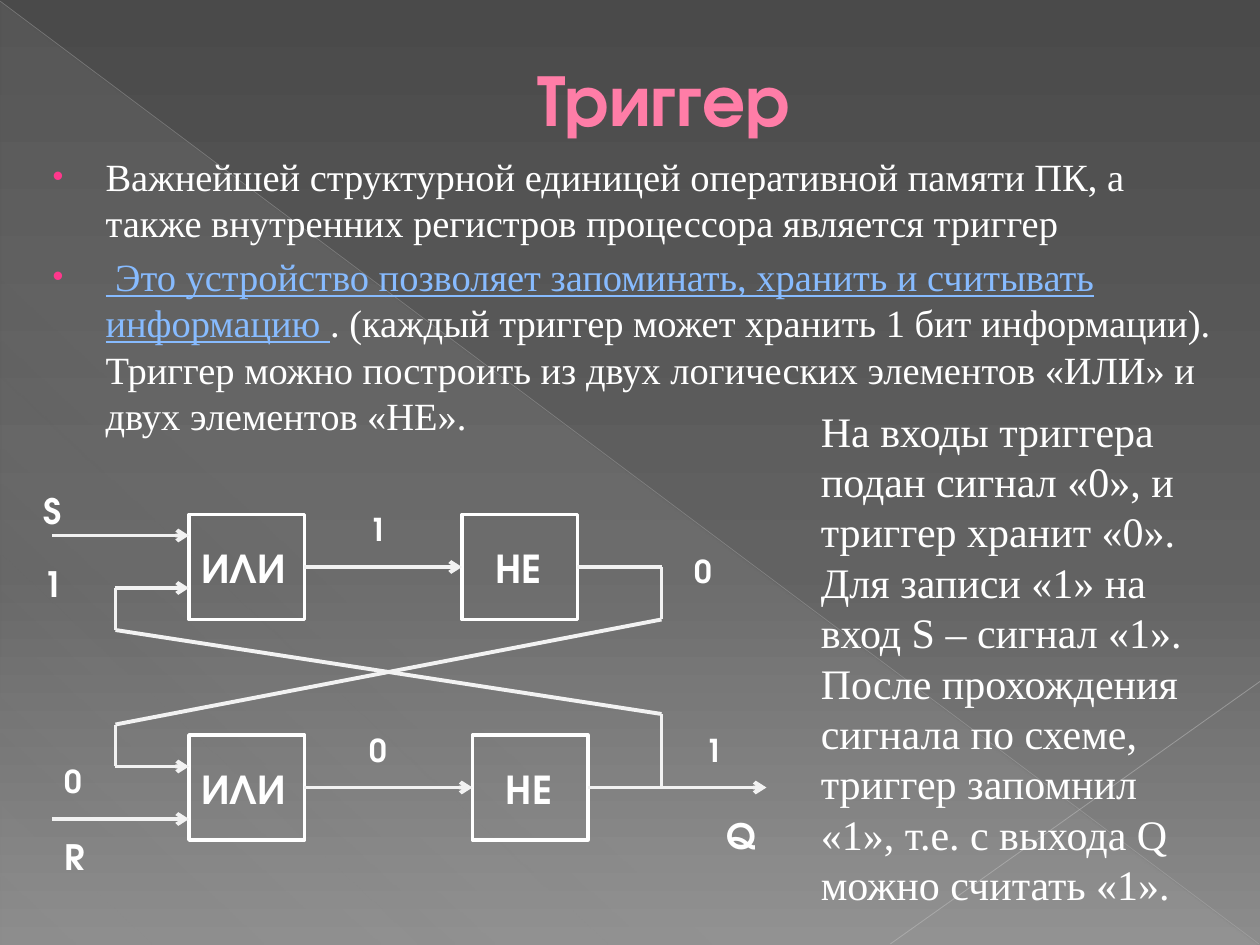
from typing import NamedTuple, Optional

from lxml import etree
from pptx import Presentation, util as u
from pptx.dml.color import RGBColor
from pptx.enum import shapes as sh, text as tx
from pptx.oxml import ns

COLORS = {
    "white": "FFFFFF", "wire": "F2F2F2", "title": "FF7DA7", "bullet": "FF388C",
    "link": "87BBFF", "veil": "D2D2D2", "diagonal": "BFBFBF", "corner": "C6C6C6",
    "bg_top": "4A4A4A", "bg_middle": "626262", "bg_bottom": "8C8C8C",
}
SANS, SERIF = "TeX Gyre Adventor", "Times New Roman"
CELL = 1 / 12  # grid step in inches: the slide is 120 columns by 90 rows
GATE_WIDTH, GATE_HEIGHT = 11, 10


class Gate(NamedTuple):
    name: str
    col: float
    row: float
    text_col: float
    text_width: float


class Wire(NamedTuple):
    start: tuple[float, float]
    end: tuple[float, float]
    arrow: bool = False


class Label(NamedTuple):
    text: str
    col: float
    row: float
    size: int = 18


GATES = [
    Gate("ИЛИ", 18, 49, 18, 10.8), Gate("ИЛИ", 18, 70, 18, 10.8),
    Gate("НЕ", 44, 49, 46, 7.3), Gate("НЕ", 45, 70, 47, 7.3),
]
WIRES = [
    Wire((11, 60), (63, 68)), Wire((11, 69), (63, 59)),
    Wire((5, 78), (18, 78), True), Wire((29, 54), (44, 54), True),
    Wire((56, 75), (73, 75), True), Wire((63, 68), (63, 75)),
    Wire((11, 69), (11, 73)), Wire((11, 73), (18, 73), True),
    Wire((11, 60), (11, 56)), Wire((11, 56), (18, 56), True),
    Wire((63, 59), (63, 54)), Wire((63, 54), (55, 54)),
    Wire((29, 75), (45, 75), True), Wire((5, 51), (18, 51), True),
]
LABELS = [
    Label("S", 3, 46, 20), Label("Q", 68, 77, 20), Label("R", 5, 79, 20),
    Label("1", 3, 53, 20), Label("1", 34, 48), Label("1", 66, 69),
    Label("0", 34, 69), Label("0", 5, 72), Label("0", 65, 52),
]
BODY = [
    [("Важнейшей структурной единицей оперативной памяти ПК, а также внутренних "
      "регистров процессора является триггер", False)],
    [(" Это устройство позволяет запоминать, хранить и считывать информацию ", True),
     (". (каждый триггер может хранить 1 бит информации). Триггер можно построить "
      "из двух логических элементов «ИЛИ» и двух элементов «НЕ».", False)],
]
EXPLANATION = (
    "На входы триггера подан сигнал «0», и триггер хранит «0». Для записи «1» на "
    "вход S – сигнал «1». После прохождения сигнала по схеме, триггер запомнил "
    "«1», т.е. с выхода Q можно считать «1»."
)


def grid(*cells: float) -> list[int]:
    return [u.Inches(cell * CELL) for cell in cells]


def rgb(name: str) -> RGBColor:
    return RGBColor.from_string(COLORS[name])


def add_xml(parent, tag: str, **attributes):
    return etree.SubElement(parent, ns.qn(tag), attributes)


def set_gradient(fill, owner, stops: list, angle: int) -> None:
    """Fill with (position, colour, opacity) stops, all but colour in percent."""
    fill.gradient()
    fill_xml = next(owner.iter(ns.qn("a:gradFill")))
    for child in list(fill_xml):
        fill_xml.remove(child)
    stop_list = add_xml(fill_xml, "a:gsLst")
    for position, color, opacity in stops:
        stop = add_xml(stop_list, "a:gs", pos=str(position * 1000))
        color_xml = add_xml(stop, "a:srgbClr", val=COLORS[color])
        add_xml(color_xml, "a:alpha", val=str(opacity * 1000))
    add_xml(fill_xml, "a:lin", ang=str(angle * 60000), scaled="0")


def style_run(run, font: str, size: float, color: str, bold: bool = False) -> None:
    run.font.name, run.font.size, run.font.bold = font, u.Pt(size), bold
    run.font.color.rgb = rgb(color)


def add_line(slide, wire: Wire, color: str, width: float, opacity: Optional[int] = None):
    line = slide.shapes.add_connector(
        sh.MSO_CONNECTOR.STRAIGHT, *grid(*wire.start, *wire.end))
    line.line.color.rgb, line.line.width = rgb(color), u.Pt(width)
    properties = line.element.spPr
    if opacity is not None:
        color_xml = next(properties.iter(ns.qn("a:srgbClr")))
        add_xml(color_xml, "a:alpha", val=str(opacity * 1000))
    if wire.arrow:
        add_xml(properties.find(ns.qn("a:ln")), "a:tailEnd", type="arrow")
    add_xml(properties, "a:effectLst")
    return line


def add_text(slide, text: str, box: tuple, font: str, size: int,
             bold: bool = True, wrap: bool = False) -> None:
    frame = slide.shapes.add_textbox(*grid(*box)).text_frame
    frame.text = text
    frame.word_wrap = wrap
    frame.auto_size = tx.MSO_AUTO_SIZE.SHAPE_TO_FIT_TEXT
    style_run(frame.paragraphs[0].runs[0], font, size, "white", bold)


def add_backdrop(slide) -> None:
    """Gradient, pale triangle and two hairlines, all behind the title."""
    set_gradient(slide.background.fill, slide.element,
                 [(0, "bg_top", 100), (60, "bg_middle", 100), (100, "bg_bottom", 100)], 90)
    veil = slide.shapes.add_shape(
        sh.MSO_SHAPE.RIGHT_TRIANGLE, *grid(0.1, 0.2, 119.8, 89.8))
    veil.shadow.inherit = False
    veil.line.fill.background()
    set_gradient(veil.fill, veil.element,
                 [(0, "veil", 10), (70, "veil", 8), (100, "veil", 1)], 133)
    diagonal = add_line(slide, Wire((0, 0.1), (119.9, 89.9)), "diagonal", 0.39, 35)
    corner = add_line(slide, Wire((120, 64.9), (84.8, 89.9)), "corner", 0.47, 45)
    for part in (veil, diagonal, corner):
        slide.shapes.title.element.addprevious(part.element)


def set_title(slide) -> None:
    title = slide.shapes.title
    title.left, title.top, title.width, title.height = grid(6, 3.5, 108, 11.5)
    frame = title.text_frame
    frame.text = "Триггер"
    frame.vertical_anchor = tx.MSO_ANCHOR.MIDDLE
    heading = frame.paragraphs[0]
    heading.alignment = tx.PP_ALIGN.CENTER
    heading._p.get_or_add_pPr().set("marL", str(u.Inches(0.53)))
    style_run(heading.runs[0], SANS, 42, "title", True)


def add_body(slide) -> None:
    frame = slide.shapes.add_textbox(*grid(3, 14, 114, 28)).text_frame
    frame.word_wrap = True
    for index, parts in enumerate(BODY):
        item = frame.add_paragraph() if index else frame.paragraphs[0]
        item.space_before = u.Pt(4.4)
        properties = item._p.get_or_add_pPr()
        properties.set("marL", str(u.Inches(0.49)))
        properties.set("indent", str(u.Inches(-0.42)))
        add_xml(add_xml(properties, "a:buClr"), "a:srgbClr", val=COLORS["bullet"])
        add_xml(properties, "a:buSzPct", val="80000")
        add_xml(properties, "a:buFont", typeface="Arial")
        add_xml(properties, "a:buChar", char="•")
        for words, is_link in parts:
            run = item.add_run()
            run.text = words
            style_run(run, SERIF, 22, "link" if is_link else "white")
            run.font.underline = is_link


def add_gate(slide, gate: Gate) -> None:
    add_text(slide, gate.name, (gate.text_col, gate.row + 2, gate.text_width, 6), SANS, 24)
    frame = slide.shapes.add_shape(
        sh.MSO_SHAPE.RECTANGLE, *grid(gate.col, gate.row, GATE_WIDTH, GATE_HEIGHT))
    frame.shadow.inherit = False
    frame.fill.background()
    frame.line.color.rgb, frame.line.width = rgb("white"), u.Pt(2)


def main() -> None:
    deck = Presentation()
    deck.slide_width, deck.slide_height = grid(120, 90)
    slide = deck.slides.add_slide(deck.slide_layouts.get_by_name("Title Only"))
    add_backdrop(slide)
    set_title(slide)
    add_body(slide)
    for gate in GATES:
        add_gate(slide, gate)
    for wire in WIRES:
        add_line(slide, wire, "wire", 2.25)
    for label in LABELS:
        is_large = label.size == 20
        box = (label.col, label.row, *((6, 5.3) if is_large else (4.1, 4.8)))
        add_text(slide, label.text, box, SANS, label.size, wrap=is_large)
    add_text(slide, EXPLANATION, (77, 38, 40, 49.7), SERIF, 24, bold=False, wrap=True)
    deck.save("out.pptx")


if __name__ == "__main__":
    main()
